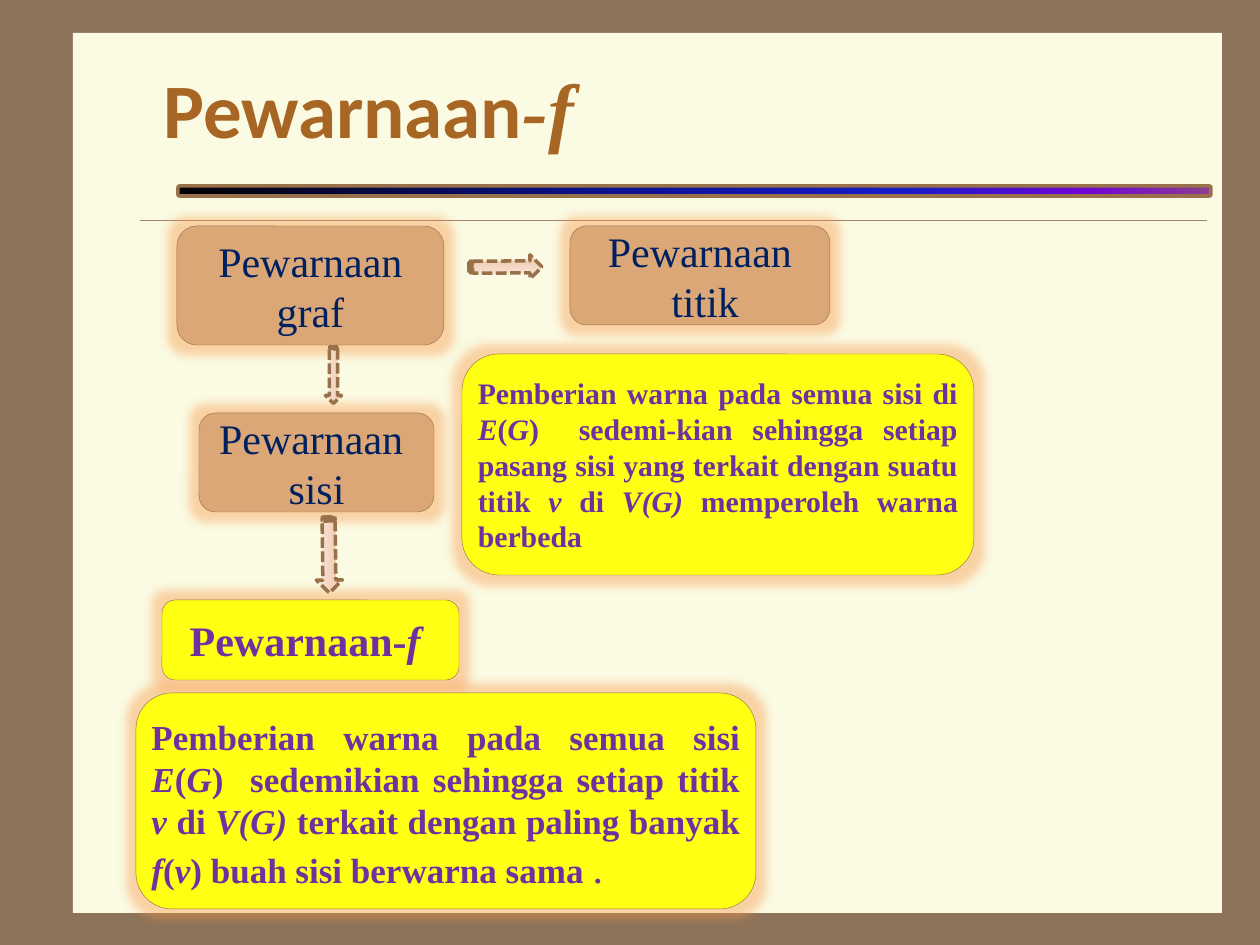
"""Build the Pewarnaan-f slide: a flow of graph colouring terms."""
from lxml.etree import SubElement
from pptx import Presentation
from pptx.dml.color import RGBColor
from pptx.enum.dml import MSO_LINE
from pptx.enum.shapes import MSO_CONNECTOR, MSO_SHAPE
from pptx.enum.text import MSO_ANCHOR, PP_ALIGN
from pptx.oxml.ns import qn
from pptx.util import Emu, Pt

SCALE = 914400 / 126
THEME = {
    "back": "8C735A", "page": "FBFAE2", "rule": "A08366", "edge": "98714A",
    "title": "A86624", "tan": "DBA776", "yellow": "FFFF14", "navy": "002060",
    "purple": "7030A0", "glow": "F79646", "serif": "Times New Roman", "sans": "Calibri",
    "bar": [(0, "000000"), (40, "0A128C"), (70, "181CC7"), (88, "7005D4"), (100, "8C3D91")],
    "arrow": [(0, "EFC29F"), (50, "F4D8C4"), (100, "F9EBE2")],
    "head": 44, "label": 24, "note": 17, "main": 20,
}


def add_box(kind, place, fill, edge=None, width=0.25, angle=0):
    shape = slide.shapes.add_shape(kind, *[Emu(round(n * SCALE)) for n in place])
    shape.shadow.inherit = False
    if isinstance(fill, str):
        shape.fill.solid()
        shape.fill.fore_color.rgb = RGBColor.from_string(fill)
    else:
        shape.fill.gradient()
        shape.fill.gradient_angle = angle
        stops = shape._element.spPr.find(qn("a:gradFill")).find(qn("a:gsLst"))
        stops[:] = []
        for pos, color in fill:
            stop = SubElement(stops, qn("a:gs"), pos=str(pos * 1000))
            SubElement(stop, qn("a:srgbClr"), val=color)
    if edge:
        shape.line.color.rgb = RGBColor.from_string(edge)
        shape.line.width = Pt(width)
    else:
        shape.line.fill.background()
    return shape


def add_runs(para, text, size, color, bold):
    for i, part in enumerate(text.split("*")):
        if part:
            run = para.add_run()
            run.text = part
            run.font.name = THEME["serif"]
            run.font.size = Pt(size)
            run.font.bold = bold
            run.font.italic = i % 2 == 1
            run.font.color.rgb = RGBColor.from_string(color)


deck = Presentation()
deck.slide_width = Emu(round(1260 * SCALE))
deck.slide_height = Emu(round(945 * SCALE))
slide = deck.slides.add_slide(deck.slide_layouts[6])
slide.background.fill.solid()
slide.background.fill.fore_color.rgb = RGBColor.from_string(THEME["back"])

add_box(MSO_SHAPE.RECTANGLE, (73, 33, 1149, 880), THEME["page"])
ends = [Emu(round(n * SCALE)) for n in (140, 220, 1207, 220)]
rule = slide.shapes.add_connector(MSO_CONNECTOR.STRAIGHT, *ends)
rule.line.color.rgb = RGBColor.from_string(THEME["rule"])
rule.line.width = Pt(0.25)
SubElement(rule._element.spPr, qn("a:effectLst"))

title = slide.shapes.add_textbox(*[Emu(round(n * SCALE)) for n in (151, 38, 1033, 140)])
frame = title.text_frame
frame.word_wrap = True
frame.vertical_anchor = MSO_ANCHOR.MIDDLE
add_runs(frame.paragraphs[0], "Pewarnaan*-f", THEME["head"], THEME["title"], True)
frame.paragraphs[0].runs[0].font.name = THEME["sans"]

add_box(MSO_SHAPE.ROUNDED_RECTANGLE, (178, 186, 1033, 10), THEME["bar"], THEME["edge"], 2)

tan = (THEME["tan"], THEME["navy"], THEME["label"], False, PP_ALIGN.CENTER, None)
term = (THEME["yellow"], THEME["purple"], THEME["label"], True, PP_ALIGN.CENTER, None)
note = (THEME["yellow"], THEME["purple"], THEME["note"], True, PP_ALIGN.JUSTIFY, 5)
main = (THEME["yellow"], THEME["purple"], THEME["main"], True, PP_ALIGN.JUSTIFY, 10)
boxes = [
    ((177, 226, 267, 119), tan, ["Pewarnaan graf"]),
    ((570, 226, 260, 99), tan, ["Pewarnaan", " titik"]),
    ((199, 413, 235, 99), tan, ["Pewarnaan ", "sisi"]),
    ((162, 600, 297, 80), term, ["Pewarnaan-*f *"]),
    ((462, 354, 512, 221), note, [
        "Pemberian warna pada semua sisi di *E*(*G*)  sedemi-kian sehingga setiap pasang sisi "
        "yang terkait dengan suatu titik *v *di *V(G) *memperoleh warna berbeda"]),
    ((136, 693, 620, 216), main, [
        "Pemberian warna pada semua sisi *E*(*G*)  sedemikian sehingga setiap titik *v *di "
        "*V(G) *terkait dengan paling banyak *f*(*v*) buah sisi berwarna sama "]),
]
for place, style, lines in boxes:
    fill, color, size, bold, align, top = style
    box = add_box(MSO_SHAPE.ROUNDED_RECTANGLE, place, fill, THEME["edge"])
    glow = SubElement(box._element.spPr.find(qn("a:effectLst")), qn("a:glow"), rad="139700")
    tint = SubElement(glow, qn("a:srgbClr"), val=THEME["glow"])
    SubElement(tint, qn("a:alpha"), val="40000")
    frame = box.text_frame
    frame.word_wrap = True
    frame.vertical_anchor = MSO_ANCHOR.MIDDLE
    if top:
        frame.margin_left = frame.margin_right = frame.margin_bottom = Emu(round(5 * SCALE))
        frame.margin_top = Emu(round(top * SCALE))
    for i, line in enumerate(lines):
        para = frame.add_paragraph() if i else frame.paragraphs[0]
        para.alignment = align
        add_runs(para, line, size, color, bold)
add_runs(para, ".", THEME["label"], THEME["purple"], False)

arrows = [((305, 367, 57, 16), 90), ((469, 255, 73, 24), 359.6), ((291, 542, 76, 26), 89.3)]
for place, turn in arrows:
    arrow = add_box(MSO_SHAPE.STRIPED_RIGHT_ARROW, place, THEME["arrow"], THEME["edge"], 2, 270)
    arrow.line.dash_style = MSO_LINE.SQUARE_DOT
    arrow.rotation = turn

deck.save("out.pptx")
